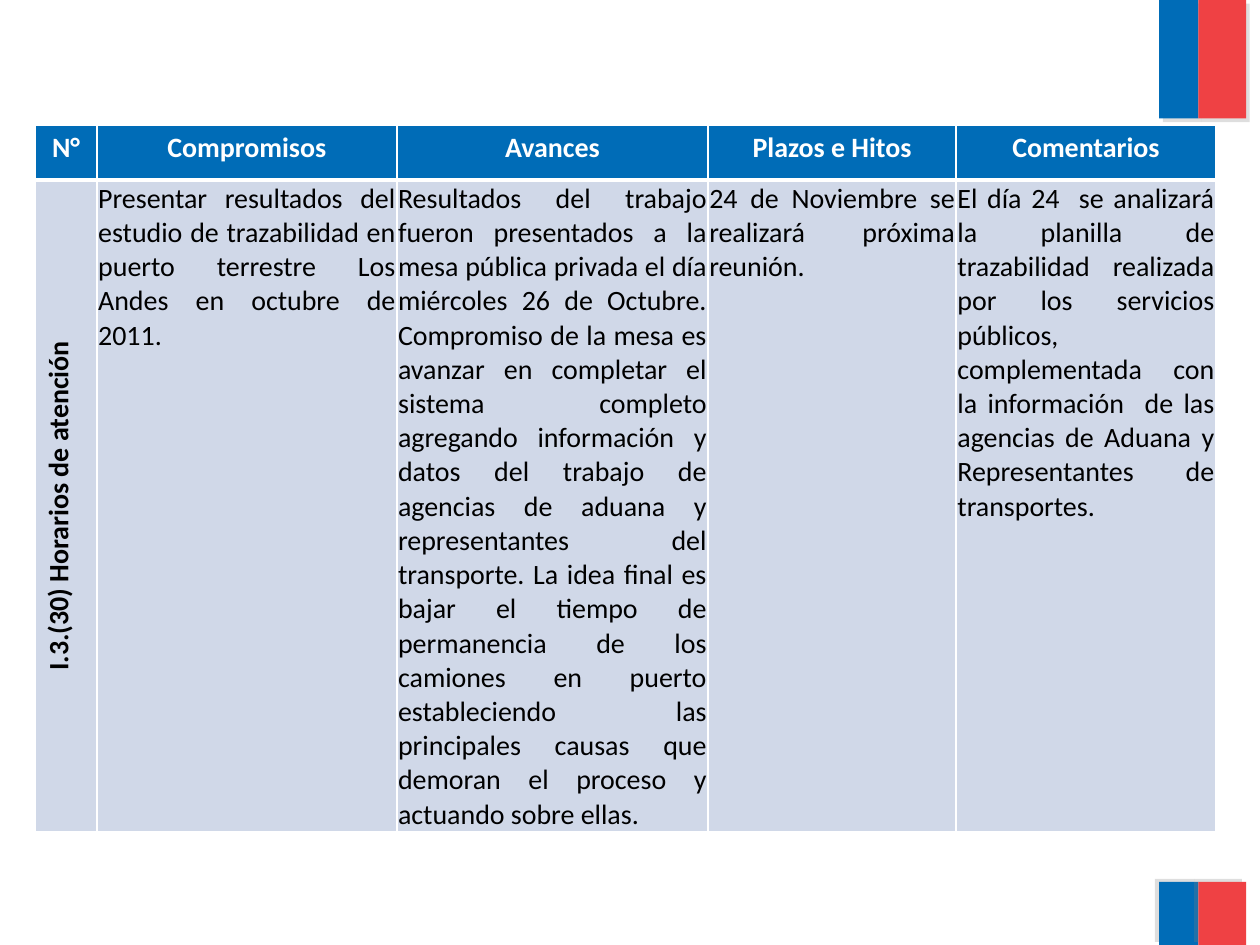
import pptx
import pptx.util
import pptx.dml.color
import pptx.enum.shapes
import pptx.enum.text
import pptx.oxml.ns
from lxml import etree

Inches = pptx.util.Inches
Pt = pptx.util.Pt
ALIGN = pptx.enum.text.PP_ALIGN
COLORS = {"blue": "006CB7", "red": "EF4144", "body": "D0D8E8",
          "white": "FFFFFF", "black": "000000", "shadow": "808080"}
HEADERS = ["N°", "Compromisos", "Avances", "Plazos e Hitos", "Comentarios"]
TOPIC = "I.3.(30) Horarios de atención"
DETAILS = [
    "Presentar resultados del estudio de trazabilidad en puerto terrestre "
    "Los Andes en octubre de 2011.",
    "Resultados del trabajo fueron presentados a la mesa pública privada el "
    "día miércoles 26 de Octubre. Compromiso de la mesa es avanzar en "
    "completar el sistema completo agregando información y datos del trabajo "
    "de agencias de aduana y representantes del transporte. La idea final es "
    "bajar el tiempo de permanencia de los camiones en puerto estableciendo "
    "las principales causas que demoran el proceso y actuando sobre ellas.",
    "24 de Noviembre se realizará próxima reunión. ",
    "El día 24  se analizará la planilla de trazabilidad realizada por los "
    "servicios públicos, complementada con la información  de las agencias de "
    "Aduana y Representantes de transportes.",
]
COL_WIDTHS = [0.49, 2.38, 2.47, 1.97, 2.06]
HEADER_HEIGHT = 0.44


def rgb(name):
    return pptx.dml.color.RGBColor.from_string(COLORS[name])


def add_node(parent, tag, **attrs):
    node = etree.SubElement(parent, pptx.oxml.ns.qn(tag))
    for key, value in attrs.items():
        node.set(key, str(value))
    return node


def add_shadow(sp, angle):
    sp.shadow.inherit = False
    effects = sp._element.spPr.find(pptx.oxml.ns.qn("a:effectLst"))
    shadow = add_node(effects, "a:outerShdw", dist=Pt(3), dir=angle * 60000,
                      algn="ctr", rotWithShape=0)
    color = add_node(shadow, "a:srgbClr", val=COLORS["shadow"])
    add_node(color, "a:alpha", val=25000)


def add_flag(s, left, top, width, height, angle):
    blue_width = width * 0.45
    bands = [("blue", 0, blue_width), ("red", blue_width, width - blue_width)]
    for color, offset, band_width in bands:
        sp = s.shapes.add_shape(
            pptx.enum.shapes.MSO_SHAPE.RECTANGLE, Inches(left + offset),
            Inches(top), Inches(band_width), Inches(height))
        sp.fill.solid()
        sp.fill.fore_color.rgb = rgb(color)
        sp.line.fill.background()
        add_shadow(sp, angle)


def fill_cell(cell, text, fill, color, bold, align, bottom=1):
    tcPr = cell._tc.get_or_add_tcPr()
    for side, width in (("L", 1), ("R", 1), ("T", 1), ("B", bottom)):
        line = add_node(tcPr, f"a:ln{side}", w=Pt(width))
        add_node(add_node(line, "a:solidFill"), "a:srgbClr", val=COLORS["white"])
    cell.fill.solid()
    cell.fill.fore_color.rgb = rgb(fill)
    p = cell.text_frame.paragraphs[0]
    p.alignment = align
    r = p.add_run()
    r.text = text
    r.font.name = "Calibri"
    r.font.size = Pt(16)
    r.font.bold = bold
    r.font.color.rgb = rgb(color)


def add_commitments(s, left, top, width, height):
    table = s.shapes.add_table(2, len(HEADERS), Inches(left), Inches(top),
                               Inches(width), Inches(height)).table
    for column, share in zip(table.columns, COL_WIDTHS):
        column.width = Inches(width * share / sum(COL_WIDTHS))
    table.rows[0].height = Inches(HEADER_HEIGHT)
    table.rows[1].height = Inches(height - HEADER_HEIGHT)
    for i, text in enumerate(HEADERS):
        fill_cell(table.cell(0, i), text, "blue", "white", True, ALIGN.CENTER, 3)
    topic = table.cell(1, 0)
    fill_cell(topic, TOPIC, "body", "black", True, ALIGN.CENTER)
    topic._tc.tcPr.set("vert", "vert270")
    for i, text in enumerate(DETAILS, 1):
        cell = table.cell(1, i)
        fill_cell(cell, text, "body", "black", False, ALIGN.JUSTIFY)
        cell.margin_left = cell.margin_right = cell.margin_top = Inches(0.01)
        cell.margin_bottom = 0


def main():
    prs = pptx.Presentation()
    prs.slide_width, prs.slide_height = Inches(10), Inches(7.5)
    s = prs.slides.add_slide(prs.slide_layouts[6])
    add_flag(s, 9.2, 0, 0.69, 0.94, 45)
    add_flag(s, 9.2, 7, 0.69, 0.5, 215)
    add_commitments(s, 0.28, 0.99, 9.37, 5.51)
    prs.save("out.pptx")


if __name__ == "__main__":
    main()
